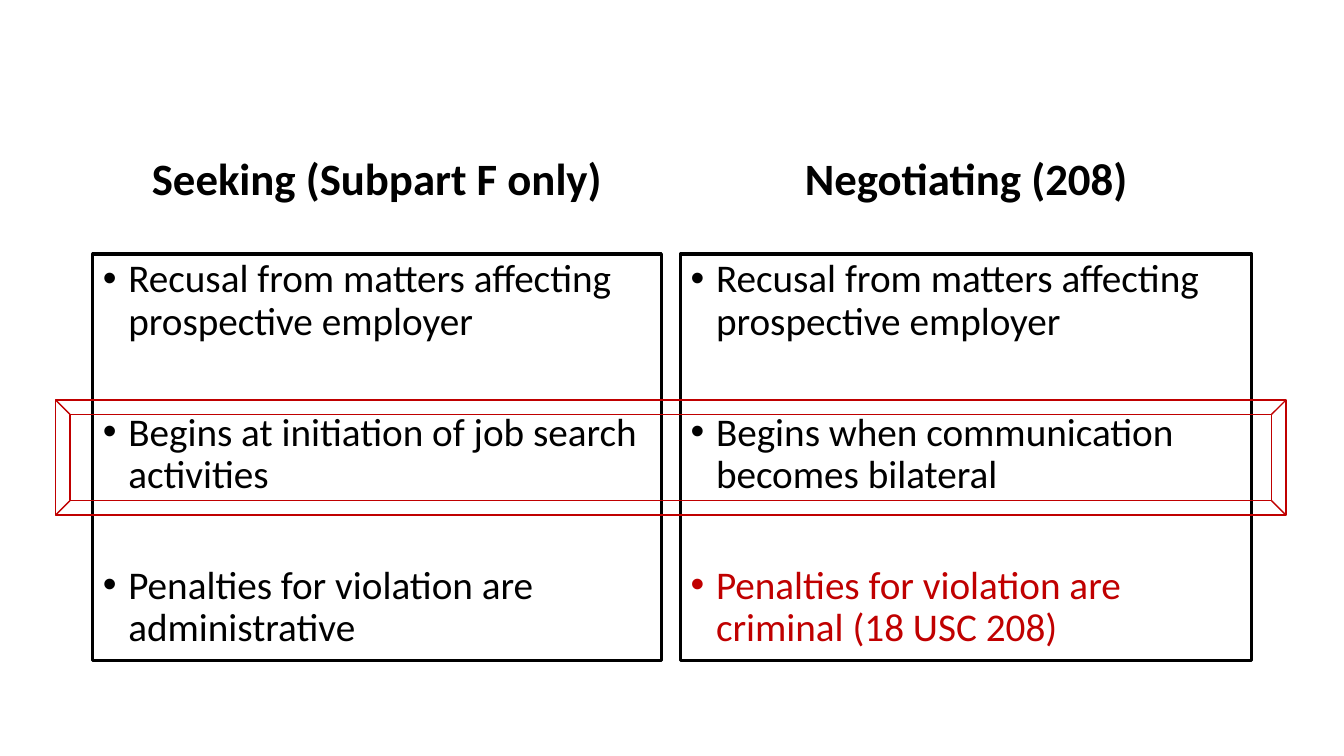
from pptx import Presentation
from pptx import util as u
from pptx.dml.color import RGBColor
from pptx.enum import shapes, text


def rgb(value):
    return RGBColor.from_string(value)


def format_text(p, size, color, bold):
    p.line_spacing = 0.9
    for r in p.runs:
        r.font.name = "Calibri"
        r.font.size = u.Pt(size)
        r.font.bold = bold
        r.font.color.rgb = rgb(color)


BLACK, RED = "000000", "C00000"
RECUSAL = "Recusal from matters affecting prospective employer"
columns = [
    (1, 2.34, 14.33, 3.02, "Seeking (Subpart F only)", [
        (RECUSAL, BLACK),
        ("Begins at initiation of job search activities", BLACK),
        ("Penalties for violation are administrative", BLACK),
    ]),
    (3, 17.15, 14.4, 3, "Negotiating (208)", [
        (RECUSAL, BLACK),
        ("Begins when communication becomes bilateral", BLACK),
        ("Penalties for violation are criminal (18 USC 208)", RED),
    ]),
]

prs = Presentation()
prs.slide_width, prs.slide_height = u.Cm(33.87), u.Cm(19.05)
s = prs.slides.add_slide(prs.slide_layouts[4])
title = s.shapes.title.element
title.getparent().remove(title)
placeholders = {sp.placeholder_format.idx: sp for sp in s.placeholders}

for idx, left, width, top, heading, points in columns:
    head, body = placeholders[idx], placeholders[idx + 1]
    for sp, y, height in ((head, top, 2.29), (body, 6.4, 10.24)):
        sp.left, sp.top = u.Cm(left), u.Cm(y)
        sp.width, sp.height = u.Cm(width), u.Cm(height)
        sp.text_frame.word_wrap = True
        sp.text_frame.auto_size = text.MSO_AUTO_SIZE.NONE

    tf = head.text_frame
    tf.text = heading
    tf.vertical_anchor = text.MSO_ANCHOR.BOTTOM
    p = tf.paragraphs[0]
    p.alignment = text.PP_ALIGN.CENTER
    p.space_before = u.Pt(10)
    format_text(p, 32, BLACK, True)

    body.line.color.rgb = rgb(BLACK)
    body.line.width = u.Pt(2.25)
    tf = body.text_frame
    tf.text = "\n".join(point for point, color in points)
    for i, (p, (point, color)) in enumerate(zip(tf.paragraphs, points)):
        p.space_before = u.Pt(49 if i else 10)
        pPr = p._p.get_or_add_pPr()
        pPr.set("marL", str(u.Cm(0.64)))
        pPr.set("indent", str(u.Cm(-0.64)))
        format_text(p, 28, color, False)

frame = s.shapes.add_shape(shapes.MSO_SHAPE.BEVEL, u.Cm(1.4), u.Cm(10.08), u.Cm(31.01), u.Cm(2.9))
frame.shadow.inherit = False
frame.fill.background()
frame.line.color.rgb = rgb(RED)
frame.line.width = u.Pt(1)

prs.save("out.pptx")
